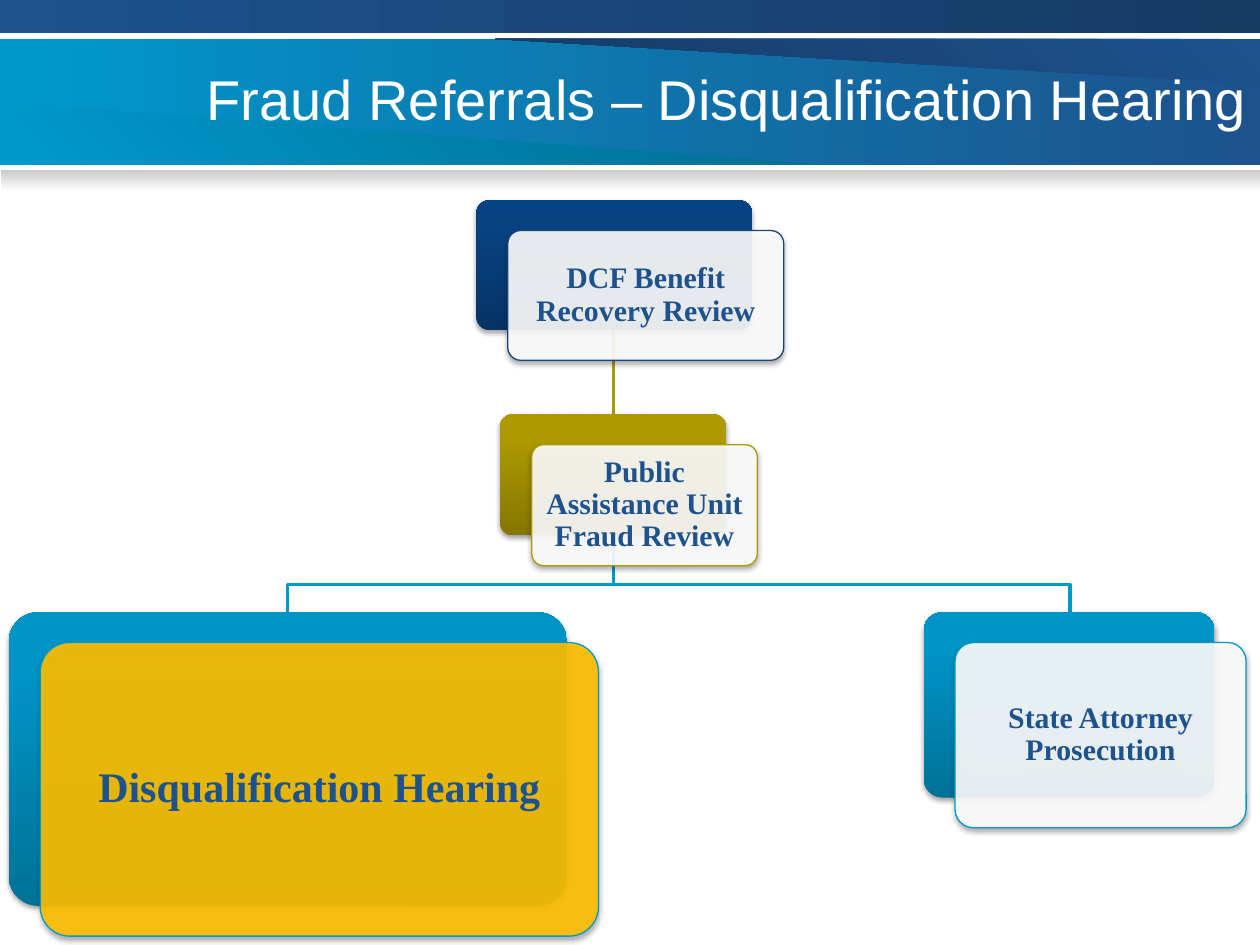
from dataclasses import dataclass

from lxml.etree import SubElement
from pptx import Presentation
from pptx.dml.color import RGBColor
from pptx.enum.shapes import MSO_CONNECTOR, MSO_SHAPE
from pptx.enum.text import MSO_ANCHOR, PP_ALIGN
from pptx.oxml.ns import qn
from pptx.util import Inches, Pt

WHITE = RGBColor(0xFF, 0xFF, 0xFF)
BLACK = RGBColor(0x00, 0x00, 0x00)
SILVER = RGBColor(0xCA, 0xCA, 0xCA)
AMBER = RGBColor(0xFF, 0xC0, 0x00)
SKY = RGBColor(0x00, 0x99, 0xCC)
TEAL = RGBColor(0x00, 0x6D, 0x92)
BLUE = RGBColor(0x1D, 0x52, 0x8D)
DEEP_BLUE = RGBColor(0x15, 0x3B, 0x65)
NAVY = RGBColor(0x17, 0x45, 0x78)
OLIVE = RGBColor(0xAD, 0x99, 0x06)

NAVY_SHADES = (
    (0, RGBColor(0x06, 0x33, 0x64)),
    (80, RGBColor(0x08, 0x42, 0x82)),
    (100, RGBColor(0x06, 0x42, 0x85)),
)
OLIVE_SHADES = (
    (0, RGBColor(0x86, 0x76, 0x00)),
    (80, RGBColor(0xAD, 0x99, 0x00)),
    (100, RGBColor(0xAE, 0x99, 0x00)),
)
SKY_SHADES = (
    (0, RGBColor(0x00, 0x72, 0x98)),
    (80, RGBColor(0x00, 0x94, 0xC6)),
    (100, RGBColor(0x00, 0x95, 0xC7)),
)

CARD_SHIFT_X, CARD_SHIFT_Y = 0.25, 0.24
TRUNK_X = 4.87
BRANCH_TOP, BRANCH_BEND, BRANCH_END = 4.25, 4.64, 4.86


@dataclass(frozen=True)
class Bar:
    left: float
    top: float
    width: float
    height: float
    start: RGBColor
    end: RGBColor
    angle: int = 0


@dataclass(frozen=True)
class Wedge:
    points: tuple
    start: RGBColor
    end: RGBColor
    angle: int


@dataclass(frozen=True)
class Card:
    text: str
    left: float
    top: float
    width: float
    height: float
    shades: tuple
    outline: RGBColor
    fill: RGBColor = WHITE
    size: int = 17
    inset: float = 0.07
    shade_opacity: int = 38


BANNER = Bar(0, 0.31, 10.01, 1, SKY, BLUE)
TOP_BAR = Bar(0, 0, 10, 0.26, BLUE, DEEP_BLUE)
BANNER_SHADE = Bar(0.01, 1.35, 9.99, 0.17, SILVER, WHITE, 90)
WEDGES = (
    Wedge(((9.82, 0.31), (3.93, 0.31), (10.01, 0.67), (10.01, 0.31)), BLUE, DEEP_BLUE, 135),
    Wedge(((0.19, 1.3), (6.43, 1.3), (0, 0.81), (0, 1.3)), SKY, TEAL, 315),
)
CARDS = (
    Card("DCF Benefit Recovery Review", 3.78, 1.59, 2.19, 1.03, NAVY_SHADES, NAVY, shade_opacity=35),
    Card("Public Assistance Unit Fraud Review", 3.97, 3.29, 1.79, 0.96, OLIVE_SHADES, OLIVE),
    Card("Disqualification Hearing", 0.07, 4.86, 4.43, 2.33, SKY_SHADES, SKY, AMBER, 24, 0.1),
    Card("State Attorney Prosecution", 7.33, 4.86, 2.31, 1.47, SKY_SHADES, SKY),
)


def fill_gradient(shape, stops: tuple, angle: int) -> None:
    shape.fill.gradient()
    shape.fill.gradient_angle = (360 - angle) % 360
    stop_list = shape._element.spPr.find(qn("a:gradFill")).find(qn("a:gsLst"))
    for stop in list(stop_list):
        stop_list.remove(stop)
    for position, color in stops:
        stop = SubElement(stop_list, qn("a:gs"), pos=str(position * 1000))
        SubElement(stop, qn("a:srgbClr"), val=str(color))


def fill_translucent(shape, color: RGBColor, opacity: int) -> None:
    shape.fill.solid()
    shape.fill.fore_color.rgb = color
    color_element = shape._element.spPr.find(qn("a:solidFill"))[0]
    SubElement(color_element, qn("a:alpha"), val=str(opacity * 1000))


def add_shadow(shape, opacity: int, distance: float) -> None:
    effects = shape._element.spPr.find(qn("a:effectLst"))
    shadow = SubElement(
        effects, qn("a:outerShdw"), blurRad=str(Pt(3.1)), dist=str(Pt(distance)),
        dir="5400000", rotWithShape="0",
    )
    color = SubElement(shadow, qn("a:srgbClr"), val=str(BLACK))
    SubElement(color, qn("a:alpha"), val=str(opacity * 1000))


def add_preset(slide, kind, left: float, top: float, width: float, height: float):
    shape = slide.shapes.add_shape(kind, Inches(left), Inches(top), Inches(width), Inches(height))
    shape.shadow.inherit = False
    shape.line.fill.background()
    return shape


def add_outline(slide, points: tuple, close: bool):
    vertices = [(Inches(x), Inches(y)) for x, y in points]
    builder = slide.shapes.build_freeform(*vertices[0])
    builder.add_line_segments(vertices[1:], close=close)
    shape = builder.convert_to_shape()
    shape.shadow.inherit = False
    return shape


def write_text(shape, text: str, *, font: str, size: int, color: RGBColor, align,
               bold: bool = False, inset: float = 0.1, line_spacing: float = 1.0) -> None:
    frame = shape.text_frame
    frame.word_wrap = True
    frame.vertical_anchor = MSO_ANCHOR.MIDDLE
    frame.margin_left = frame.margin_right = Inches(inset)
    frame.margin_top = frame.margin_bottom = Inches(inset)
    paragraph = frame.paragraphs[0]
    paragraph.alignment = align
    paragraph.line_spacing = line_spacing
    run = paragraph.add_run()
    run.text = text
    run.font.name = font
    run.font.size = Pt(size)
    run.font.bold = bold
    run.font.color.rgb = color


def draw_bar(slide, bar: Bar) -> None:
    shape = add_preset(slide, MSO_SHAPE.RECTANGLE, bar.left, bar.top, bar.width, bar.height)
    fill_gradient(shape, ((0, bar.start), (100, bar.end)), bar.angle)


def draw_wedge(slide, wedge: Wedge) -> None:
    shape = add_outline(slide, wedge.points, close=True)
    fill_gradient(shape, ((0, wedge.start), (100, wedge.end)), wedge.angle)
    shape.line.fill.background()


def draw_branch(slide, end_x: float) -> None:
    points = ((TRUNK_X, BRANCH_TOP), (TRUNK_X, BRANCH_BEND), (end_x, BRANCH_BEND), (end_x, BRANCH_END))
    shape = add_outline(slide, points, close=False)
    shape.fill.background()
    shape.line.color.rgb = SKY
    shape.line.width = Pt(2)


def draw_trunk(slide, top: float, bottom: float) -> None:
    connector = slide.shapes.add_connector(
        MSO_CONNECTOR.STRAIGHT, Inches(TRUNK_X), Inches(top), Inches(TRUNK_X), Inches(bottom))
    connector.line.color.rgb = OLIVE
    connector.line.width = Pt(2)
    SubElement(connector._element.spPr, qn("a:effectLst"))


def draw_card(slide, card: Card) -> None:
    back = add_preset(slide, MSO_SHAPE.ROUNDED_RECTANGLE, card.left, card.top, card.width, card.height)
    fill_gradient(back, card.shades, 270)
    add_shadow(back, card.shade_opacity, 1.6)
    front = add_preset(slide, MSO_SHAPE.ROUNDED_RECTANGLE, card.left + CARD_SHIFT_X,
                       card.top + CARD_SHIFT_Y, card.width, card.height)
    fill_translucent(front, card.fill, 90)
    front.line.color.rgb = card.outline
    front.line.width = Pt(0.75)
    add_shadow(front, 35, 1.8)
    for shape in (back, front):
        shape.adjustments[0] = 0.1
    write_text(front, card.text, font="Times New Roman", size=card.size, color=BLUE,
               align=PP_ALIGN.CENTER, bold=True, inset=card.inset, line_spacing=0.9)


def main() -> None:
    presentation = Presentation()
    presentation.slide_width, presentation.slide_height = Inches(10), Inches(7.5)
    slide = presentation.slides.add_slide(presentation.slide_layouts[6])
    draw_bar(slide, BANNER)
    for wedge in WEDGES:
        draw_wedge(slide, wedge)
    for bar in (TOP_BAR, BANNER_SHADE):
        draw_bar(slide, bar)
    title = slide.shapes.add_textbox(Inches(1.5), Inches(0.3), Inches(8.5), Inches(0.95))
    write_text(title, "Fraud Referrals – Disqualification Hearing", font="Arial", size=32,
               color=WHITE, align=PP_ALIGN.RIGHT)
    for end_x in (8.49, 2.28):
        draw_branch(slide, end_x)
    draw_trunk(slide, 2.62, 3.29)
    for card in CARDS:
        draw_card(slide, card)
    presentation.save("out.pptx")


if __name__ == "__main__":
    main()
